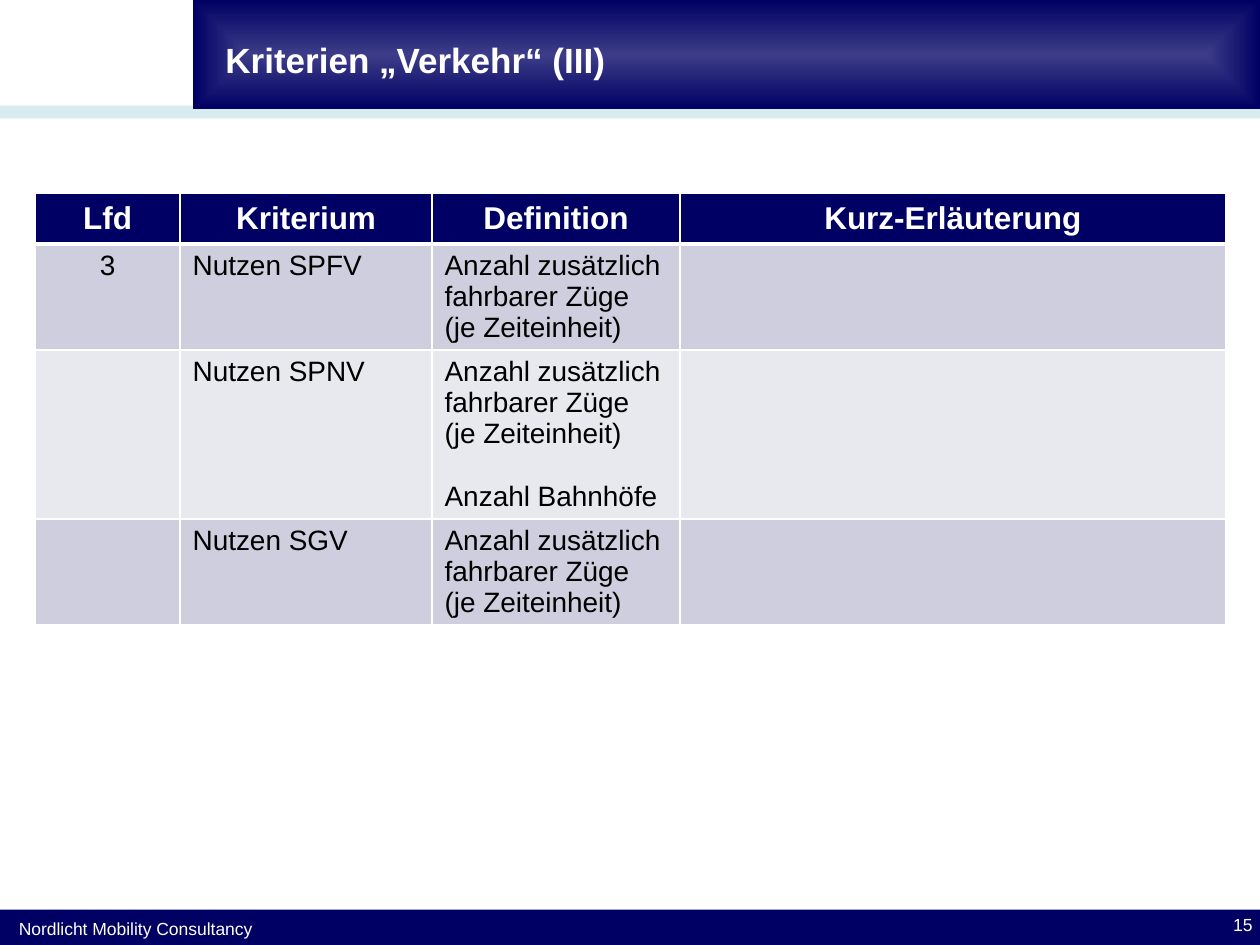
from lxml import etree
from pptx import Presentation
from pptx.dml.color import RGBColor
from pptx.enum.shapes import MSO_SHAPE
from pptx.enum.text import MSO_ANCHOR, MSO_AUTO_SIZE, PP_ALIGN
from pptx.oxml import parse_xml
from pptx.oxml.ns import nsdecls, qn
from pptx.util import Cm, Pt

LEFT, CENTER, RIGHT = PP_ALIGN.LEFT, PP_ALIGN.CENTER, PP_ALIGN.RIGHT
TOP, MIDDLE = MSO_ANCHOR.TOP, MSO_ANCHOR.MIDDLE
RECTANGLE = MSO_SHAPE.RECTANGLE
NO_AUTOFIT = MSO_AUTO_SIZE.NONE

FONT = "Arial"
NAVY, INDIGO, PALE_TEAL = "000064", "3C3C88", "BBE0E3"
WHITE, BLACK = "FFFFFF", "000000"
BAND_COLORS = ("CECEDE", "E8E8EF")

SLIDE_WIDTH, SLIDE_HEIGHT = 25.4, 19.05
HEADER_LEFT, HEADER_HEIGHT = 3.89, 2.2
FOOTER_HEIGHT = 0.71

COLUMN_WIDTHS = (2.92, 5.08, 5.0, 11.0)
ROW_HEIGHTS = (1.03, 2.14, 3.38, 2.14)
HEADINGS = ("Lfd", "Kriterium", "Definition", "Kurz-Erläuterung")
TRAINS = "Anzahl zusätzlich fahrbarer Züge (je Zeiteinheit)"
CRITERIA = (
    ("3", "Nutzen SPFV", TRAINS, ""),
    ("", "Nutzen SPNV", TRAINS + "\nAnzahl Bahnhöfe", ""),
    ("", "Nutzen SGV", TRAINS, ""),
)


def rgb(color):
    return RGBColor.from_string(color)


def write_text(frame, text, size, color, bold=False, align=LEFT, gap=0):
    """Write one paragraph per line of text, with gap points between them."""
    for index, line in enumerate(text.split("\n")):
        paragraph = frame.add_paragraph() if index else frame.paragraphs[0]
        paragraph.text = line
        paragraph.alignment = align
        paragraph.space_before = Pt(gap if index else 0)
        font = paragraph.font
        font.name, font.size, font.bold = FONT, Pt(size), bold
        font.color.rgb = rgb(color)


def add_bar(slide, left, top, width, height, color):
    bar = slide.shapes.add_shape(RECTANGLE, Cm(left), Cm(top), Cm(width), Cm(height))
    bar.shadow.inherit = False
    bar.line.fill.background()
    bar.fill.solid()
    bar.fill.fore_color.rgb = rgb(color)
    return bar


def set_opacity(shape, percent):
    color = shape.fill._xPr.find(qn("a:solidFill"))[0]
    etree.SubElement(color, qn("a:alpha"), val=str(percent * 1000))


def set_centre_gradient(shape, inner, outer):
    """Blend from the middle of the shape to its edges."""
    shape.fill.gradient()
    for stop, color, position in zip(shape.fill.gradient_stops, (inner, outer), (0, 1)):
        stop.color.rgb = rgb(color)
        stop.position = position
    gradient = shape.fill._xPr.find(qn("a:gradFill"))
    gradient.replace(gradient.find(qn("a:lin")), parse_xml(
        f'<a:path {nsdecls("a")} path="shape">'
        '<a:fillToRect l="50000" t="50000" r="50000" b="50000"/></a:path>'))


def add_label(slide, left, top, width, height, text, **text_format):
    box = slide.shapes.add_textbox(Cm(left), Cm(top), Cm(width), Cm(height))
    box.text_frame.word_wrap = True
    write_text(box.text_frame, text, **text_format)


def format_title(slide, text):
    title = slide.shapes.title
    title.left, title.top = Cm(4.29), Cm(0.51)
    title.width, title.height = Cm(21.11), Cm(1.37)
    frame = title.text_frame
    frame.auto_size = NO_AUTOFIT
    frame.vertical_anchor = MIDDLE
    write_text(frame, text, size=20, color=WHITE, bold=True)
    # Bring the title in front of the header bar
    slide.shapes._spTree.append(title._element)


def set_borders(cell, bottom, top):
    properties = cell._tc.get_or_add_tcPr()
    for side, width in (("L", 1), ("R", 1), ("T", top), ("B", bottom)):
        properties.append(parse_xml(
            f'<a:ln{side} {nsdecls("a")} w="{Pt(width)}"><a:solidFill>'
            f'<a:srgbClr val="{WHITE}"/></a:solidFill></a:ln{side}>'))


def add_criteria_table(slide):
    rows = (HEADINGS, *CRITERIA)
    table = slide.shapes.add_table(
        len(rows), len(HEADINGS), Cm(0.71), Cm(3.89),
        Cm(sum(COLUMN_WIDTHS)), Cm(sum(ROW_HEIGHTS))).table
    for column, width in zip(table.columns, COLUMN_WIDTHS):
        column.width = Cm(width)
    for row_index, texts in enumerate(rows):
        table.rows[row_index].height = Cm(ROW_HEIGHTS[row_index])
        heading = row_index == 0
        fill = NAVY if heading else BAND_COLORS[(row_index - 1) % 2]
        for column_index, text in enumerate(texts):
            cell = table.cell(row_index, column_index)
            set_borders(cell, bottom=3 if heading else 1, top=3 if row_index == 1 else 1)
            cell.fill.solid()
            cell.fill.fore_color.rgb = rgb(fill)
            cell.vertical_anchor = MIDDLE if heading else TOP
            write_text(cell.text_frame, text, size=18 if heading else 16,
                       color=WHITE if heading else BLACK, bold=heading, gap=18,
                       align=CENTER if heading or column_index == 0 else LEFT)


def main():
    presentation = Presentation()
    presentation.slide_width, presentation.slide_height = Cm(SLIDE_WIDTH), Cm(SLIDE_HEIGHT)
    slide = presentation.slides.add_slide(presentation.slide_layouts[5])

    stripe = add_bar(slide, 0, 2.13, SLIDE_WIDTH, 0.26, PALE_TEAL)
    set_opacity(stripe, 60)
    header = add_bar(slide, HEADER_LEFT, 0, SLIDE_WIDTH - HEADER_LEFT, HEADER_HEIGHT, NAVY)
    set_centre_gradient(header, INDIGO, NAVY)
    format_title(slide, "Kriterien „Verkehr“ (III)")

    add_criteria_table(slide)

    add_bar(slide, 0, SLIDE_HEIGHT - FOOTER_HEIGHT, SLIDE_WIDTH, FOOTER_HEIGHT, NAVY)
    add_label(slide, 0.13, 18.39, 16, 0.69, "Nordlicht Mobility Consultancy",
              size=10, color=WHITE)
    add_label(slide, 19.58, 18.31, 5.92, 0.7, "15", size=10, color=WHITE, align=RIGHT)

    presentation.save("out.pptx")


if __name__ == "__main__":
    main()
